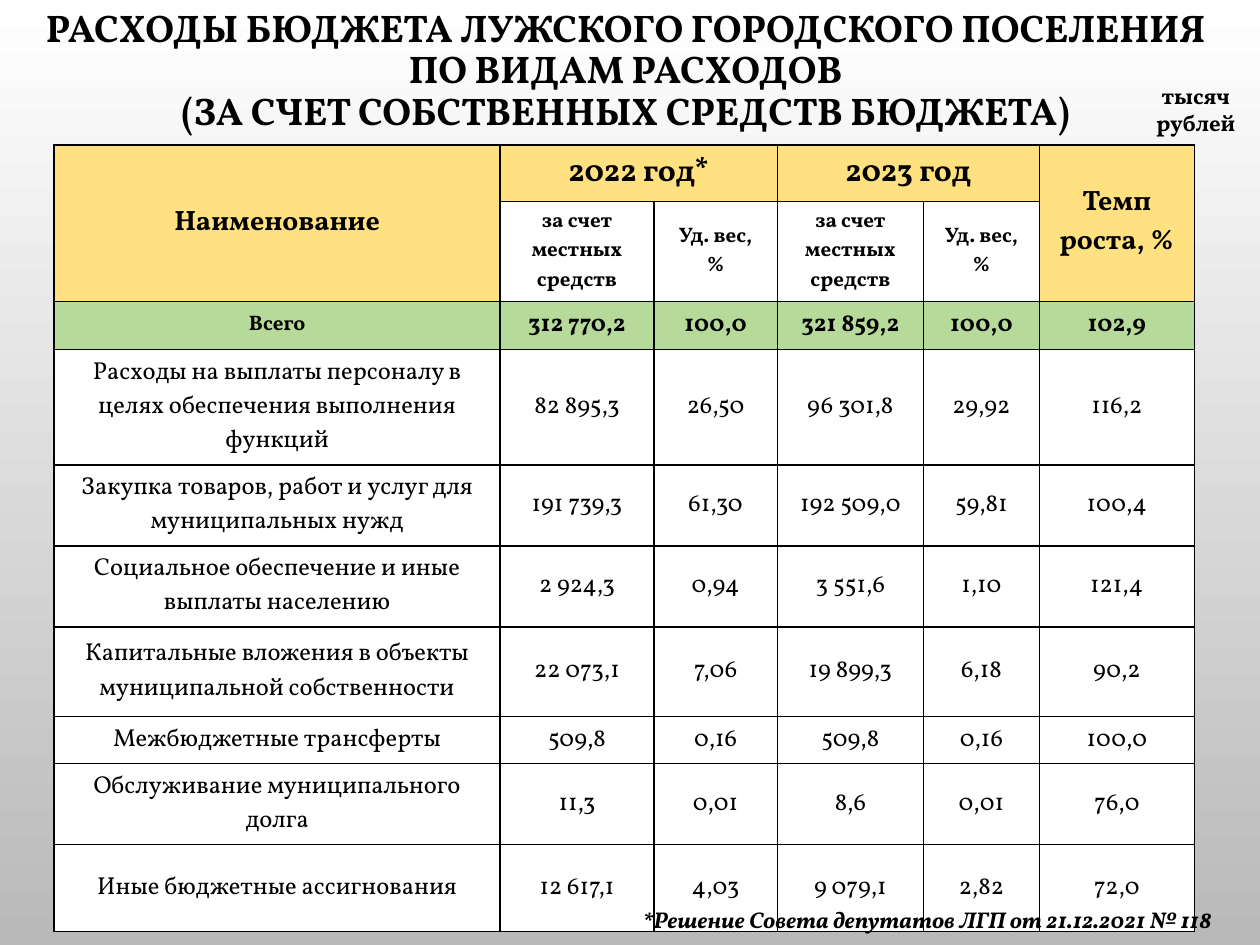
from lxml import etree
from pptx import Presentation
from pptx.dml.color import RGBColor
from pptx.enum import text
from pptx.oxml import ns
from pptx.util import Inches, Pt

FONT = "Vollkorn"
COLORS = {
    "ink": "000000",
    "header": "FFE181",
    "total": "B6DA9A",
    "body": "FFFFFF",
    "top": "FFFFFF",
    "bottom": "B9B9B9",
}
COLUMN_WIDTHS = [3.54, 1.22, 0.98, 1.16, 0.92, 1.23]
ROW_HEIGHTS = [0.39, 0.69, 0.38, 0.78, 0.55, 0.59, 0.71, 0.34, 0.55, 0.69]
LOCAL_FUNDS = "за счет местных средств"
HEADINGS = [
    (0, 0, 1, 0, "Наименование", 16),
    (0, 1, 0, 2, "2022 год*", 18),
    (0, 3, 0, 4, "2023 год", 18),
    (0, 5, 1, 5, "Темп роста, %", 16),
]
SUBHEADINGS = [LOCAL_FUNDS, "Уд. вес,\n%", LOCAL_FUNDS, "Уд. вес, %"]
TOTAL = ["Всего", "312 770,2", "100,0", "321 859,2", "100,0", "102,9"]
EXPENSES = [
    ["Расходы на выплаты персоналу в целях обеспечения выполнения функций",
     "82 895,3", "26,50", "96 301,8", "29,92", "116,2"],
    ["Закупка товаров, работ и услуг для муниципальных нужд",
     "191 739,3", "61,30", "192 509,0", "59,81", "100,4"],
    ["Социальное обеспечение и иные выплаты населению",
     "2 924,3", "0,94", "3 551,6", "1,10", "121,4"],
    ["Капитальные вложения в объекты муниципальной собственности",
     "22 073,1", "7,06", "19 899,3", "6,18", "90,2"],
    ["Межбюджетные трансферты", "509,8", "0,16", "509,8", "0,16", "100,0"],
    ["Обслуживание муниципального долга", "11,3", "0,01", "8,6", "0,01", "76,0"],
    ["Иные бюджетные ассигнования", "12 617,1", "4,03", "9 079,1", "2,82", "72,0"],
]


def color(name):
    return RGBColor.from_string(COLORS[name])


def add_run(paragraph, wording, size, bold=True, italic=False):
    run = paragraph.add_run()
    run.text = wording
    run.font.name = FONT
    run.font.size = Pt(size)
    run.font.bold = bold
    run.font.italic = italic
    run.font.color.rgb = color("ink")


def paint_background(slide):
    fill = slide.background.fill
    fill.gradient()
    fill.gradient_angle = 270
    for stop, name, position in zip(fill.gradient_stops, ("top", "bottom"), (0, 1)):
        stop.color.rgb = color(name)
        stop.position = position


def add_title(slide, lines):
    title = slide.shapes.title
    title.left, title.top = Inches(0.2), Inches(-0.02)
    title.width, title.height = Inches(9.53), Inches(1.17)
    frame = title.text_frame
    frame.word_wrap = True
    frame.auto_size = text.MSO_AUTO_SIZE.NONE
    frame.vertical_anchor = text.MSO_ANCHOR.MIDDLE
    paragraph = frame.paragraphs[0]
    paragraph.alignment = text.PP_ALIGN.CENTER
    paragraph.line_spacing = 0.9
    for index, line in enumerate(lines):
        if index:
            paragraph.add_line_break()
        add_run(paragraph, line, 22)


def add_label(slide, left, top, width, height, wording, alignment, italic=False):
    box = slide.shapes.add_textbox(Inches(left), Inches(top), Inches(width), Inches(height))
    box.text_frame.word_wrap = True
    paragraph = box.text_frame.paragraphs[0]
    paragraph.alignment = alignment
    add_run(paragraph, wording, 13, italic=italic)


def style_cell(cell, fill):
    cell.fill.solid()
    cell.fill.fore_color.rgb = color(fill)
    cell.vertical_anchor = text.MSO_ANCHOR.MIDDLE
    properties = cell._tc.get_or_add_tcPr()
    for index, side in enumerate(("lnL", "lnR", "lnT", "lnB")):
        border = etree.Element(ns.qn(f"a:{side}"), w=str(Pt(1)))
        solid = etree.SubElement(border, ns.qn("a:solidFill"))
        etree.SubElement(solid, ns.qn("a:srgbClr"), val=COLORS["ink"])
        properties.insert(index, border)


def write_cell(cell, wording, size, bold=True):
    frame = cell.text_frame
    for index, line in enumerate(wording.split("\n")):
        paragraph = frame.add_paragraph() if index else frame.paragraphs[0]
        paragraph.alignment = text.PP_ALIGN.CENTER
        add_run(paragraph, line, size, bold)


def add_expense_table(slide):
    frame = slide.shapes.add_table(
        len(ROW_HEIGHTS), len(COLUMN_WIDTHS),
        Inches(0.43), Inches(1.15), Inches(sum(COLUMN_WIDTHS)), Inches(sum(ROW_HEIGHTS)))
    table = frame.table
    for column, width in zip(table.columns, COLUMN_WIDTHS):
        column.width = Inches(width)
    for row, height in zip(table.rows, ROW_HEIGHTS):
        row.height = Inches(height)

    row_fills = ["header", "body", "total"] + ["body"] * len(EXPENSES)
    for row, fill in zip(table.rows, row_fills):
        for cell in row.cells:
            style_cell(cell, fill)

    for top, left, bottom, right, wording, size in HEADINGS:
        heading = table.cell(top, left)
        heading.merge(table.cell(bottom, right))
        write_cell(heading, wording, size)
    for column, wording in enumerate(SUBHEADINGS, start=1):
        write_cell(table.cell(1, column), wording, 12)
    for column, wording in enumerate(TOTAL):
        write_cell(table.cell(2, column), wording, 14 if column else 12)
    for row, values in enumerate(EXPENSES, start=3):
        for column, wording in enumerate(values):
            write_cell(table.cell(row, column), wording, 14, bold=False)


def main():
    deck = Presentation()
    deck.slide_width, deck.slide_height = Inches(10), Inches(7.5)
    slide = deck.slides.add_slide(deck.slide_layouts[5])
    paint_background(slide)
    add_title(slide, [
        "РАСХОДЫ БЮДЖЕТА ЛУЖСКОГО ГОРОДСКОГО ПОСЕЛЕНИЯ ПО ВИДАМ РАСХОДОВ",
        "(ЗА СЧЕТ СОБСТВЕННЫХ СРЕДСТВ БЮДЖЕТА)",
    ])
    add_expense_table(slide)
    add_label(slide, 5, 7.14, 4.88, 0.32,
              "*Решение Совета депутатов ЛГП от 21.12.2021 № 118",
              text.PP_ALIGN.LEFT, italic=True)
    add_label(slide, 8.98, 0.6, 1.02, 0.54, "тысяч рублей", text.PP_ALIGN.CENTER)
    deck.save("out.pptx")


if __name__ == "__main__":
    main()
